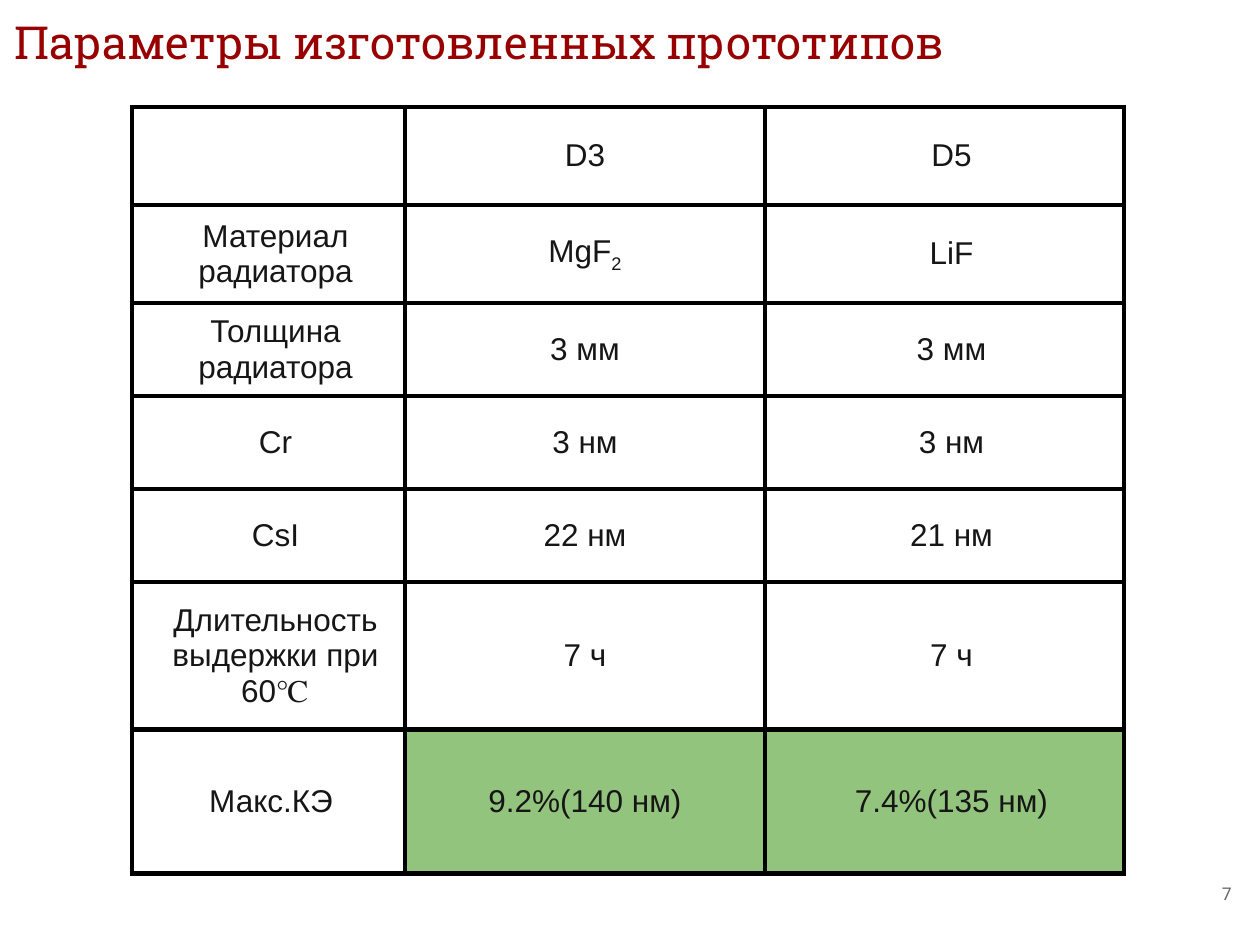
from dataclasses import dataclass

import lxml.etree
import pptx
import pptx.dml.color
import pptx.enum.text
import pptx.oxml.ns
import pptx.util

EMU_PER_PX = 914400 / 126
ALIGN = pptx.enum.text.PP_ALIGN
ANCHOR = pptx.enum.text.MSO_ANCHOR


@dataclass(frozen=True)
class Piece:
    text: str
    font: str = "Arial"
    size: int = 18
    color: str = "161616"
    baseline: int = 0


@dataclass(frozen=True)
class Row:
    height: int
    label: tuple[Piece, ...]
    d3: tuple[Piece, ...]
    d5: tuple[Piece, ...]
    value_fill: str | None = None


def px(length: int) -> pptx.util.Emu:
    return pptx.util.Emu(round(length * EMU_PER_PX))


def rgb(value: str) -> pptx.dml.color.RGBColor:
    return pptx.dml.color.RGBColor.from_string(value)


def apply(target, values: dict) -> None:
    for name, value in values.items():
        setattr(target, name, value)


def plain(text: str) -> tuple[Piece, ...]:
    return (Piece(text),)


def write(paragraph, pieces: tuple[Piece, ...], alignment) -> None:
    paragraph.alignment = alignment
    for piece in pieces:
        run = paragraph.add_run()
        run.text = piece.text
        apply(run.font, {"name": piece.font, "size": pptx.util.Pt(piece.size), "bold": False})
        run.font.color.rgb = rgb(piece.color)
        if piece.baseline:
            run.font._element.set("baseline", str(piece.baseline * 1000))


def fill_text_shape(shape, box: tuple[int, ...], piece: Piece, alignment, anchor) -> None:
    apply(shape, dict(zip(("left", "top", "width", "height"), map(px, box))))
    margins = ("margin_left", "margin_top", "margin_right", "margin_bottom")
    apply(shape.text_frame, {
        **dict.fromkeys(margins, pptx.util.Inches(0.1)),
        "word_wrap": True,
        "auto_size": pptx.enum.text.MSO_AUTO_SIZE.NONE,
        "vertical_anchor": anchor,
    })
    write(shape.text_frame.paragraphs[0], (piece,), alignment)


def add_borders(cell, color: str, points: int) -> None:
    properties = cell._tc.get_or_add_tcPr()
    qn = pptx.oxml.ns.qn
    for index, side in enumerate(("lnL", "lnR", "lnT", "lnB")):
        line = lxml.etree.Element(qn(f"a:{side}"), w=str(pptx.util.Pt(points)))
        fill = lxml.etree.SubElement(line, qn("a:solidFill"))
        lxml.etree.SubElement(fill, qn("a:srgbClr"), val=color)
        properties.insert(index, line)


def format_cell(cell, pieces: tuple[Piece, ...], fill: str | None, indent: int) -> None:
    apply(cell, {
        "margin_left": px(2),
        "margin_right": px(2),
        "margin_top": 0,
        "margin_bottom": 0,
        "vertical_anchor": ANCHOR.MIDDLE,
    })
    if fill:
        cell.fill.solid()
        cell.fill.fore_color.rgb = rgb(fill)
    else:
        cell.fill.background()
    add_borders(cell, "000000", 3)
    paragraph = cell.text_frame.paragraphs[0]
    paragraph._p.get_or_add_pPr().set("marL", str(px(indent)))
    write(paragraph, pieces, ALIGN.CENTER)


def add_parameter_table(slide, left: int, top: int, widths: tuple[int, ...], rows: list[Row]) -> None:
    height = sum(row.height for row in rows)
    frame = slide.shapes.add_table(
        len(rows), len(widths), px(left), px(top), px(sum(widths)), px(height)
    )
    table = frame.table
    apply(table, {"first_row": False, "horz_banding": False})
    for column, width in zip(table.columns, widths):
        column.width = px(width)
    for index, row in enumerate(rows):
        table.rows[index].height = px(row.height)
        label_fill = "FFFFFF" if row.label else None
        format_cell(table.cell(index, 0), row.label, label_fill, 14)
        format_cell(table.cell(index, 1), row.d3, row.value_fill, 0)
        format_cell(table.cell(index, 2), row.d5, row.value_fill, 14)


ROWS = [
    Row(98, (), plain("D3"), plain("D5")),
    Row(98, plain("Материал радиатора"), (Piece("MgF"), Piece("2", baseline=-25)), plain("LiF")),
    Row(93, plain("Толщина радиатора"), plain("3 мм"), plain("3 мм")),
    Row(93, plain("Cr"), plain("3 нм"), plain("3 нм")),
    Row(93, plain("CsI"), plain("22 нм"), plain("21 нм")),
    Row(
        148,
        (Piece("Длительность выдержки при 60"), Piece("℃", font="Times New Roman")),
        plain("7 ч"),
        plain("7 ч"),
    ),
    Row(144, plain("Макс.КЭ "), plain("9.2%(140 нм)"), plain("7.4%(135 нм)"), "93C47D"),
]


def main() -> None:
    presentation = pptx.Presentation()
    apply(presentation, {"slide_width": px(1260), "slide_height": px(945)})
    slide = presentation.slides.add_slide(presentation.slide_layouts[5])
    title = Piece("Параметры изготовленных прототипов", "Roboto Slab", 26, "980000")
    fill_text_shape(slide.shapes.title, (2, 1, 1174, 105), title, ALIGN.LEFT, ANCHOR.TOP)
    add_parameter_table(slide, 132, 107, (273, 360, 359), ROWS)
    page_box = (1168, 857, 76, 72)
    page_number = slide.shapes.add_textbox(*map(px, page_box))
    fill_text_shape(
        page_number, page_box, Piece("7", "Roboto", 10, "666666"), ALIGN.RIGHT, ANCHOR.MIDDLE
    )
    presentation.save("out.pptx")


if __name__ == "__main__":
    main()
